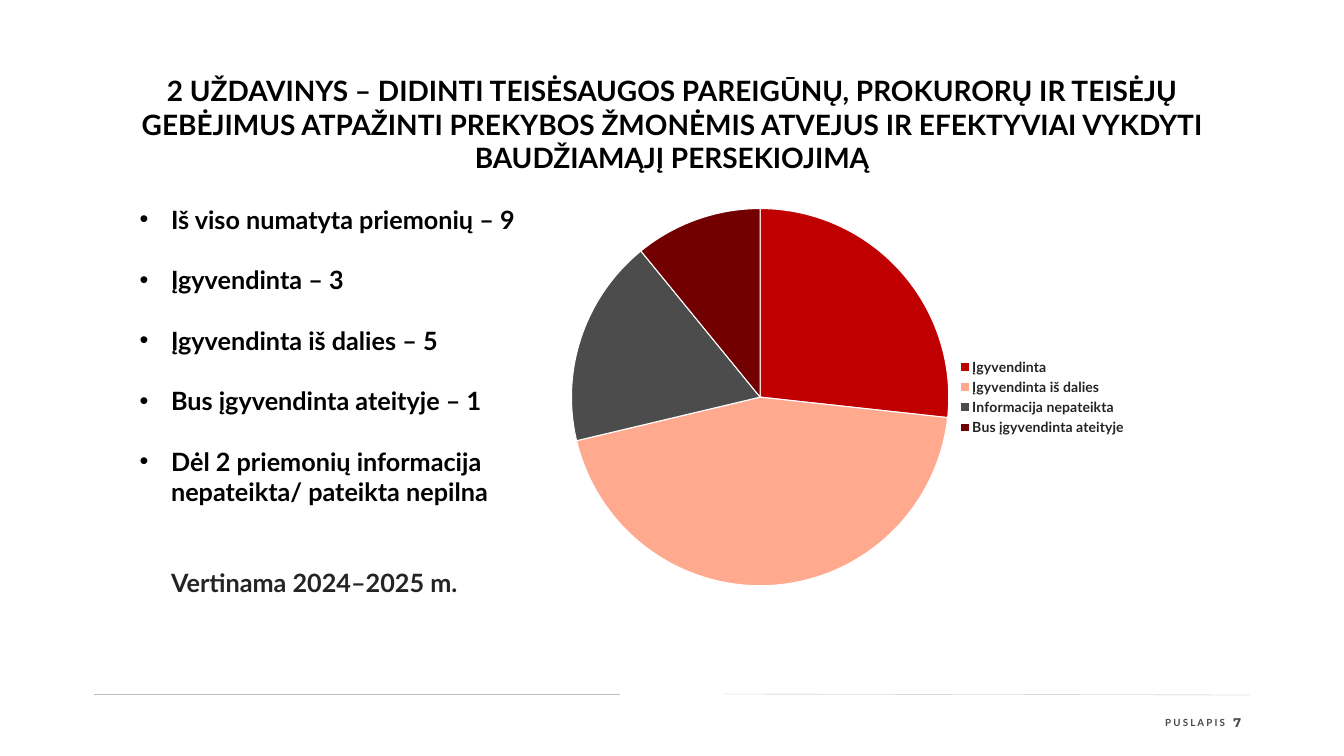
from lxml import etree
from pptx import Presentation
from pptx.chart.data import CategoryChartData
from pptx.dml.color import RGBColor
from pptx.enum.chart import XL_CHART_TYPE as ChartType, XL_LEGEND_POSITION as LegendPosition
from pptx.enum.shapes import MSO_CONNECTOR as Connector
from pptx.enum.text import MSO_ANCHOR as Anchor, PP_ALIGN as Align
from pptx.oxml.ns import qn
from pptx.util import Pt

COLORS = {
    "black": "000000", "ink": "242424", "footer": "494949", "rule": "BFBFBF", "white": "FFFFFF",
    "done": "C00000", "partly": "FFA98E", "missing": "4C4C4C", "future": "730000",
}


def style(font, size, color, name="Lato"):
    font.size = Pt(size)
    font.name = name
    font.bold = True
    font.color.rgb = RGBColor.from_string(COLORS[color])


def add_box(left, top, width, height, margins=(7.2, 3.6, 7.2, 3.6)):
    frame = page.shapes.add_textbox(Pt(left), Pt(top), Pt(width), Pt(height)).text_frame
    frame.word_wrap = True
    frame.margin_left, frame.margin_top, frame.margin_right, frame.margin_bottom = map(Pt, margins)
    return frame


deck = Presentation()
deck.slide_width, deck.slide_height = Pt(1919.52), Pt(1080)
page = deck.slides.add_slide(deck.slide_layouts[6])

for left, start, end in [(134.64, 992.16, 992.16), (1033.92, 991.44, 992.88)]:
    rule = page.shapes.add_connector(Connector.STRAIGHT, Pt(left), Pt(start), Pt(left + 751), Pt(end))
    rule.line.color.rgb = RGBColor.from_string(COLORS["rule"])
    rule.line.width = Pt(0.5)
    etree.SubElement(rule._element.spPr, qn("a:effectLst"))

number = add_box(1742.4, 1013.76, 62, 36, (19, 7.2, 14.4, 7.2)).paragraphs[0]
number.text = "7"
style(number.font, 18, "footer", "Montserrat")

label_box = add_box(1661.04, 1023.12, 88.56, 17.28, (0, 0, 0, 0))
label_box.word_wrap = False
label_box.vertical_anchor = Anchor.MIDDLE
label = label_box.paragraphs[0]
label.alignment = Align.RIGHT
span = label.add_run()
span.text = "PUSLAPIS"
style(span.font, 14, "footer")
span.font._element.set("spc", "300")

body = add_box(192.24, 288, 1512, 574.56)
lines = [
    ("Iš viso numatyta priemonių – 9", True, 0, "black"),
    ("Įgyvendinta – 3", True, 43.2, "black"),
    ("Įgyvendinta iš dalies – 5", True, 43.2, "black"),
    ("Bus įgyvendinta ateityje – 1", True, 43.2, "black"),
    ("Dėl 2 priemonių informacija", True, 43.2, "black"),
    ("nepateikta/ pateikta nepilna", False, 0, "black"),
    ("Vertinama 2024–2025 m.", False, 86.4, "ink"),
]
for index, (text, bulleted, gap, color) in enumerate(lines):
    para = body.add_paragraph() if index else body.paragraphs[0]
    para.text = text
    para.space_before = Pt(gap)
    properties = para._p.get_or_add_pPr()
    properties.set("marL", str(Pt(45)))
    if bulleted:
        properties.set("indent", str(-Pt(45)))
        etree.SubElement(properties, qn("a:buFont")).set("typeface", "Arial")
        etree.SubElement(properties, qn("a:buChar")).set("char", "•")
    style(para.font, 36, color)

data = CategoryChartData()
data.categories = ["Įgyvendinta", "Įgyvendinta iš dalies", "Informacija nepateikta", "Bus įgyvendinta ateityje"]
data.add_series("Series 1", (27, 45, 18, 11))
chart = page.shapes.add_chart(ChartType.PIE, Pt(805.68), Pt(288), Pt(812.16), Pt(558.72), data).chart
chart.has_title = False
chart.font.name = "Lato"
chart.font.size = Pt(10)
chart.has_legend = True
chart.legend.position = LegendPosition.RIGHT
chart.legend.include_in_layout = False
style(chart.legend.font, 20, "ink")
plot = chart.plots[0]
plot.vary_by_categories = True
for index, color in enumerate(["done", "partly", "missing", "future"]):
    slice_format = plot.series[0].points[index].format
    slice_format.fill.solid()
    slice_format.fill.fore_color.rgb = RGBColor.from_string(COLORS[color])
    slice_format.line.color.rgb = RGBColor.from_string(COLORS["white"])
    slice_format.line.width = Pt(1.5)

title = add_box(167.76, 101.52, 1584, 152.64).paragraphs[0]
title.text = (
    "2 UŽDAVINYS – DIDINTI TEISĖSAUGOS PAREIGŪNŲ, PROKURORŲ IR TEISĖJŲ "
    "GEBĖJIMUS ATPAŽINTI PREKYBOS ŽMONĖMIS ATVEJUS IR EFEKTYVIAI VYKDYTI "
    "BAUDŽIAMĄJĮ PERSEKIOJIMĄ"
)
title.alignment = Align.CENTER
style(title.font, 40, "black")

deck.save("out.pptx")
